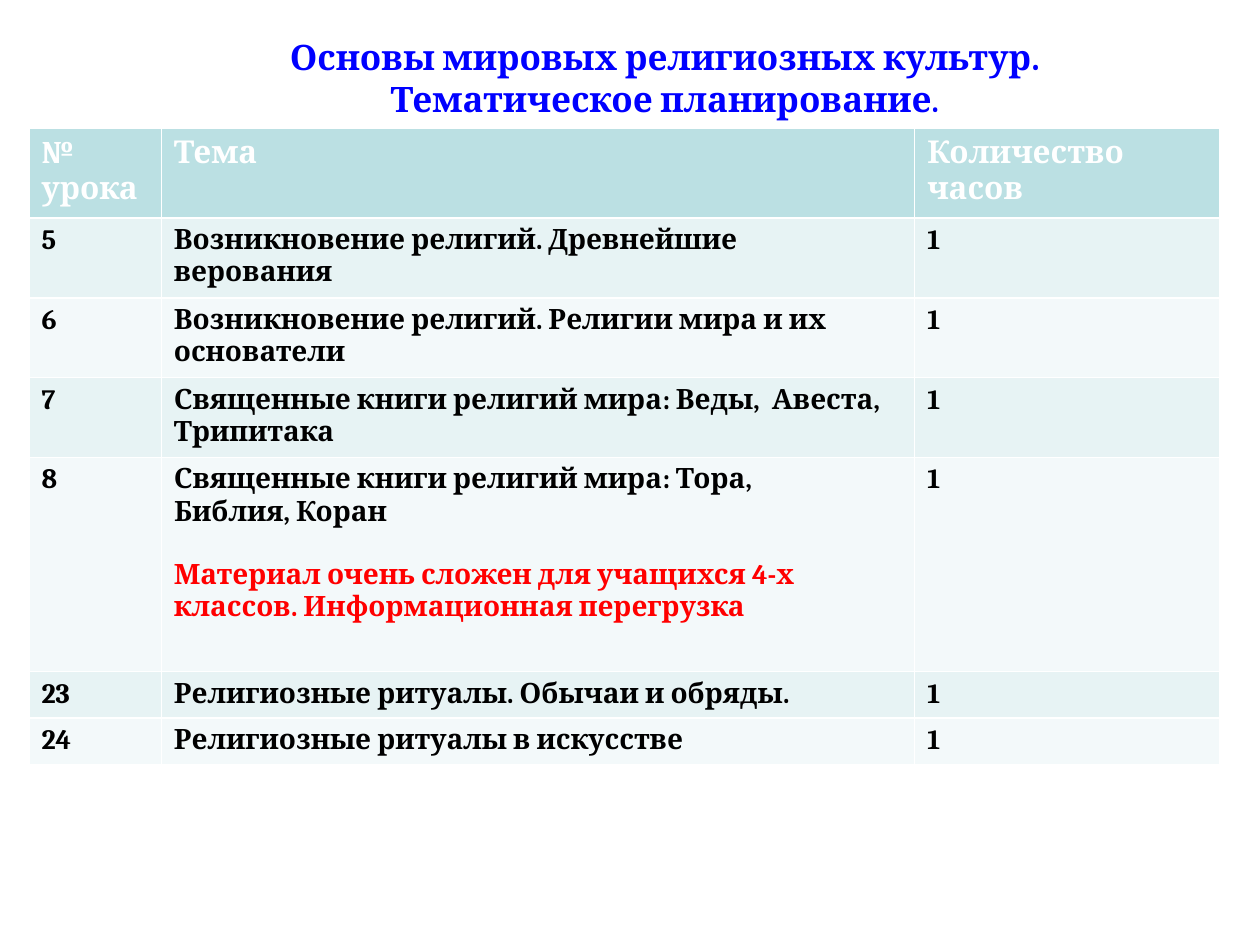
import pptx
import pptx.util
import pptx.dml.color
import pptx.enum.text

Inches, Pt = pptx.util.Inches, pptx.util.Pt
RGB = pptx.dml.color.RGBColor
ALIGN = pptx.enum.text.PP_ALIGN

BLUE = RGB(0x00, 0x00, 0xFF)
RED = RGB(0xFF, 0x00, 0x00)
BLACK = RGB(0x00, 0x00, 0x00)
WHITE = RGB(0xFF, 0xFF, 0xFF)
TEAL = RGB(0xBB, 0xE0, 0xE3)
BANDS = [RGB(0xE7, 0xF3, 0xF4), RGB(0xF3, 0xF9, 0xFA)]
FONT = "Cambria"

TITLE = ["Основы мировых религиозных культур.", "Тематическое планирование"]
HEAD = ["№ урока", "Тема", "Количество часов"]
NOTE = ("Материал очень сложен для учащихся 4-х классов. "
        "Информационная перегрузка")
# Lesson number, lines of the topic, hours
LESSONS = [
    ("5", ["Возникновение религий. Древнейшие верования"], "1"),
    ("6", ["Возникновение религий. Религии мира и их основатели"], "1"),
    ("7", ["Священные книги религий мира: Веды,  Авеста, Трипитака"], "1"),
    ("8", ["Священные книги религий мира: Тора,", "Библия, Коран"], "1"),
    ("23", ["Религиозные ритуалы. Обычаи и обряды."], "1"),
    ("24", ["Религиозные ритуалы в искусстве"], "1"),
]
NOTED = "8"
COLS = [1.05, 5.98, 2.42]
ROWS = [0.71, 0.63, 0.63, 0.63, 1.7, 0.37, 0.37]


def write(para, text, size=16, color=BLACK, align=None, before=None):
    """Add a bold run to a paragraph."""
    run = para.add_run()
    run.text = text
    font = run.font
    font.name, font.size, font.bold = FONT, Pt(size), True
    font.color.rgb = color
    if align is not None:
        para.alignment = align
    if before is not None:
        para.space_before = Pt(before)


def lines(frame, texts, **form):
    for i, text in enumerate(texts):
        para = frame.add_paragraph() if i else frame.paragraphs[0]
        write(para, text, **form)


def paint(cell, color):
    cell.fill.solid()
    cell.fill.fore_color.rgb = color


deck = pptx.Presentation()
deck.slide_width, deck.slide_height = Inches(10), Inches(7.5)
slide = deck.slides.add_slide(deck.slide_layouts[6])

box = slide.shapes.add_textbox(Inches(1.8), Inches(0.23),
                               Inches(6.95), Inches(0.77))
frame = box.text_frame
frame.word_wrap = True
lines(frame, TITLE, size=20, color=BLUE, align=ALIGN.CENTER)
write(frame.paragraphs[-1], ".", size=18, color=BLUE)

# The default table style gives the white rules between cells
table = slide.shapes.add_table(len(ROWS), len(COLS), Inches(0.23), Inches(1.02),
                               Inches(sum(COLS)), Inches(sum(ROWS))).table
for col, width in zip(table.columns, COLS):
    col.width = Inches(width)
for row, height in zip(table.rows, ROWS):
    row.height = Inches(height)

for c, text in enumerate(HEAD):
    cell = table.cell(0, c)
    paint(cell, TEAL)
    lines(cell.text_frame, [text], size=18, color=WHITE)

for r, (number, topic, hours) in enumerate(LESSONS):
    for c, texts in enumerate([[number], topic, [hours]]):
        cell = table.cell(r + 1, c)
        paint(cell, BANDS[r % 2])
        lines(cell.text_frame, texts)
    if number == NOTED:
        para = table.cell(r + 1, 1).text_frame.add_paragraph()
        write(para, NOTE, color=RED, before=18)

deck.save("out.pptx")
